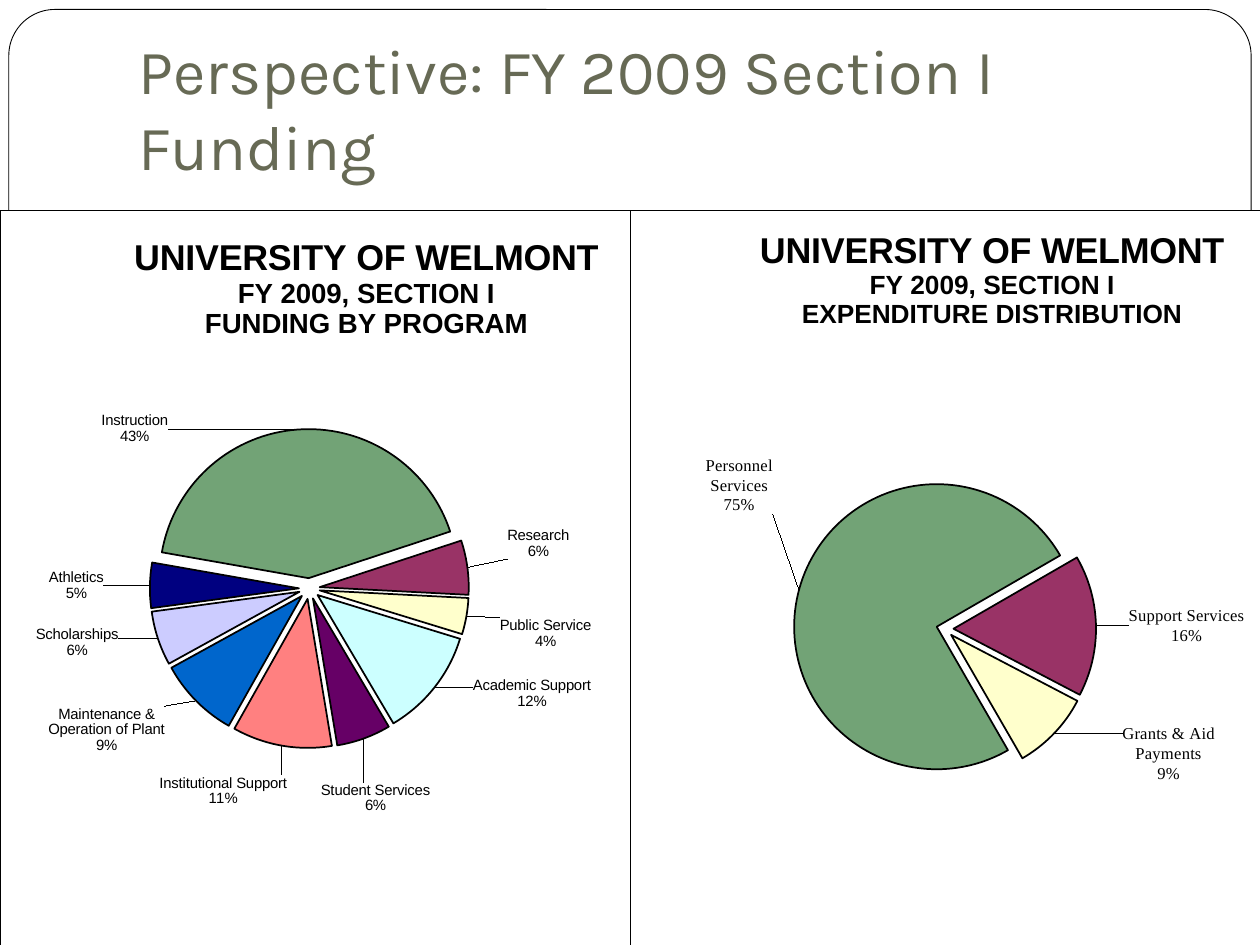
from lxml import etree
from pptx import Presentation
from pptx.chart.data import CategoryChartData
from pptx.dml.color import RGBColor
from pptx.enum.chart import XL_CHART_TYPE, XL_LABEL_POSITION
from pptx.enum.shapes import MSO_SHAPE
from pptx.enum.text import MSO_ANCHOR, MSO_AUTO_SIZE, PP_ALIGN
from pptx.oxml import parse_xml
from pptx.oxml.ns import nsdecls, qn
from pptx.util import Inches, Pt

PIE = XL_CHART_TYPE.PIE
OUTSIDE = XL_LABEL_POSITION.OUTSIDE_END
ROUNDED = MSO_SHAPE.ROUNDED_RECTANGLE
BOTTOM = MSO_ANCHOR.BOTTOM
NO_FIT = MSO_AUTO_SIZE.NONE
LEFT = PP_ALIGN.LEFT
WIDTH, HEIGHT = Inches(10), Inches(7.5)
BLACK, WHITE = "000000", "FFFFFF"

PROGRAMS = [
    ("Instruction", 43, "72A376", (-0.25, 0.03)),
    ("Research", 6, "993366", (0.05, -0.01)),
    ("Public Service", 4, "FFFFCC", (0.04, 0)),
    ("Academic Support", 12, "CCFFFF", (0.05, -0.02)),
    ("Student Services", 6, "660066", (-0.07, 0.05)),
    ("Institutional Support", 11, "FF8080", (0.01, 0.03)),
    ("Maintenance & Operation of Plant", 9, "0066CC", (-0.04, 0)),
    ("Scholarships", 6, "CCCCFF", (-0.05, -0.02)),
    ("Athletics", 5, "000080", (-0.06, 0)),
]
EXPENDITURES = [
    ("Personal Services", 75, "72A376", (-0.03, -0.1)),
    ("Support Services", 16, "993366", (0.04, 0)),
    ("Grants & Aid Payments", 9, "FFFFCC", (0.1, -0.02)),
]


def colour(value):
    return RGBColor.from_string(value)


def paint(part_format, fill, line, width):
    part_format.fill.solid()
    part_format.fill.fore_color.rgb = colour(fill)
    part_format.line.color.rgb = colour(line)
    part_format.line.width = Pt(width)


def style(font, face, size, ink=BLACK, bold=False):
    font.name, font.size, font.bold = face, Pt(size), bold
    font.color.rgb = colour(ink)


def place_manually(parent, position, settings):
    for old_layout in parent.findall(qn("c:layout")):
        parent.remove(old_layout)
    layout = parse_xml(f"<c:layout {nsdecls('c')}><c:manualLayout/></c:layout>")
    for tag, value in settings:
        etree.SubElement(layout[0], qn(f"c:{tag}")).set("val", str(value))
    parent.insert(position, layout)


def add_heading(slide, box):
    frame = slide.shapes.add_shape(
        ROUNDED, 0.007 * WIDTH, 0.01 * HEIGHT, 0.986 * WIDTH, 0.976 * HEIGHT)
    frame.adjustments[0] = 0.05
    frame.shadow.inherit = False
    paint(frame, WHITE, BLACK, 0.5)
    title = slide.shapes.title
    title.element.addprevious(frame.element)
    title.left, title.top, title.width, title.height = box
    text = title.text_frame
    text.text = "Perspective: FY 2009 Section I Funding"
    text.word_wrap, text.auto_size = True, NO_FIT
    text.vertical_anchor = BOTTOM
    text.margin_bottom = Inches(0.1)
    text.paragraphs[0].alignment = LEFT
    style(text.paragraphs[0].runs[0].font, "Karla", 36, "676A55")


def add_chart_title(chart, subject, sizes, corner):
    chart.has_title = True
    title = chart.chart_title
    title.include_in_layout = False
    title.text_frame.text = f"UNIVERSITY OF WELMONT\nFY 2009, SECTION I\n{subject}"
    for paragraph, size in zip(title.text_frame.paragraphs, sizes):
        style(paragraph.runs[0].font, "Arial", size, bold=True)
    place_manually(chart.element.xpath("c:chart/c:title")[0], 1, [
        ("xMode", "edge"), ("yMode", "edge"), ("x", corner[0]), ("y", corner[1])])


def label_slices(chart, slices, lead_caption, face, size):
    series = chart.plots[0].series[0]
    labels = series.data_labels
    labels.number_format, labels.number_format_is_linked = "0%", False
    labels.position = OUTSIDE
    style(labels.font, face, size)
    for index in range(len(slices)):
        label = series.points[index].data_label
        if index == 0:
            label.text_frame.text = lead_caption
            for paragraph in label.text_frame.paragraphs:
                style(paragraph.runs[0].font, face, size)
        else:
            style(label.font, face, size)
        label.position = OUTSIDE
    for label, (_, _, _, shift) in zip(chart.element.xpath(".//c:dLbl"), slices):
        place_manually(label, 1, [("x", shift[0]), ("y", shift[1])])
    for group in chart.element.xpath(".//c:ser/c:dLbls | .//c:dLbl"):
        for tag, shown in (("showVal", 0), ("showCatName", 1), ("showPercent", 1)):
            group.find(qn(f"c:{tag}")).set("val", str(shown))
        separator = etree.Element(qn("c:separator"))
        separator.text = "\n"
        last_flag = group.xpath("c:showBubbleSize | c:showPercent")[-1]
        last_flag.addnext(separator)


def add_pie(slide, box, slices, start, explosion, plot_box):
    data = CategoryChartData()
    data.categories = [name for name, _, _, _ in slices]
    data.add_series("Series 1", [value for _, value, _, _ in slices])
    chart = slide.shapes.add_chart(PIE, *box, data).chart
    chart.has_legend = False
    style(chart.font, "Times New Roman", 9.5)
    chart.element.find(qn("c:chart")).addnext(parse_xml(
        f"<c:spPr {nsdecls('c', 'a')}>"
        f'<a:solidFill><a:srgbClr val="{WHITE}"/></a:solidFill>'
        f'<a:ln w="{Pt(0.25)}"><a:solidFill><a:srgbClr val="{BLACK}"/></a:solidFill></a:ln>'
        "</c:spPr>"))
    plot = chart.plots[0]
    plot.vary_by_categories = True
    series = plot.series[0]
    paint(series.format, slices[0][2], BLACK, 1)
    burst = etree.Element(qn("c:explosion"))
    burst.set("val", str(explosion))
    chart.element.xpath(".//c:ser/c:spPr")[0].addnext(burst)
    for index, (_, _, fill, _) in enumerate(slices):
        paint(series.points[index].format, fill, BLACK, 1)
    pie = chart.element.xpath(".//c:pieChart")[0]
    for old_angle in pie.findall(qn("c:firstSliceAng")):
        pie.remove(old_angle)
    etree.SubElement(pie, qn("c:firstSliceAng")).set("val", str(start))
    place_manually(chart.element.xpath("c:chart/c:plotArea")[0], 0, [
        ("layoutTarget", "inner"), ("xMode", "edge"), ("yMode", "edge"),
        *zip("xywh", plot_box)])
    return chart


def main():
    deck = Presentation()
    deck.slide_width, deck.slide_height = WIDTH, HEIGHT
    slide = deck.slides.add_slide(deck.slide_layouts[5])
    add_heading(slide, (Inches(1), Inches(0.3), Inches(8.5), Inches(1.25)))

    chart_top = Inches(1.67)
    chart_height = HEIGHT - chart_top
    programs = add_pie(slide, (0, chart_top, Inches(5.17), chart_height),
                       PROGRAMS, 280, 7, (0.23, 0.29, 0.49, 0.45))
    add_chart_title(programs, "FUNDING BY PROGRAM", (20.5, 15.75, 15.75), (0.2, 0.03))
    label_slices(programs, PROGRAMS, "Instruction\n43%", "Arial", 8.5)

    expenditures = add_pie(slide, (WIDTH // 2, chart_top, WIDTH // 2, chart_height),
                           EXPENDITURES, 150, 6, (0.26, 0.34, 0.48, 0.46))
    add_chart_title(expenditures, "EXPENDITURE DISTRIBUTION", (20.5, 15, 15), (0.2, 0.02))
    label_slices(expenditures, EXPENDITURES, "Personnel Services\n75%",
                 "Times New Roman", 9.5)
    deck.save("out.pptx")


if __name__ == "__main__":
    main()
